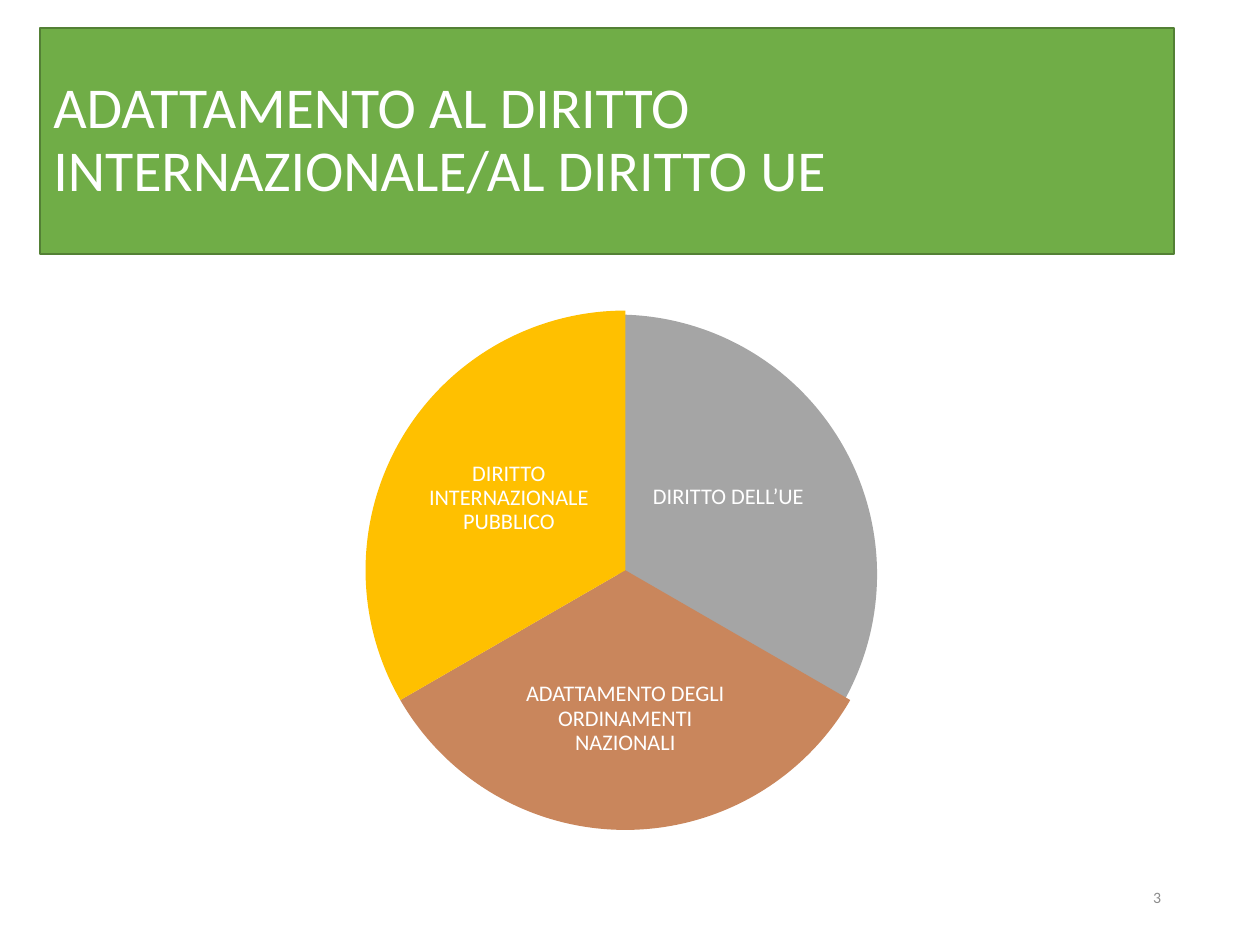
from pptx import Presentation
from pptx.dml.color import RGBColor
from pptx.enum.shapes import MSO_SHAPE
from pptx.enum.text import MSO_ANCHOR, PP_ALIGN
from pptx.util import Inches, Pt

RECTANGLE = MSO_SHAPE.RECTANGLE
PIE = MSO_SHAPE.PIE
MIDDLE = MSO_ANCHOR.MIDDLE
LEFT, CENTER, RIGHT = PP_ALIGN.LEFT, PP_ALIGN.CENTER, PP_ALIGN.RIGHT

FONT = "Calibri"
WHITE = "FFFFFF"
PIE_SIZE = 3.88
ANGLE_UNITS_PER_DEGREE = 0.6

SECTORS = [
    ("DIRITTO DELL’UE", "A5A5A5", (2.67, 2.35), (270, 30), (4.78, 3.07, 1.32, 1.29)),
    ("ADATTAMENTO DEGLI ORDINAMENTI NAZIONALI", "C9865C", (2.73, 2.32), (30, 150),
     (3.79, 4.77, 1.76, 1.2)),
    ("DIRITTO INTERNAZIONALE PUBBLICO", "FFC000", (2.73, 2.32), (150, 270),
     (3.14, 3.08, 1.32, 1.29)),
]


def color(hex_value):
    return RGBColor.from_string(hex_value)


def write_text(shape, text, size, font_color=WHITE, align=LEFT, line_spacing=None, inset=None):
    frame = shape.text_frame
    frame.word_wrap = True
    frame.vertical_anchor = MIDDLE
    if inset is not None:
        frame.margin_left = frame.margin_right = Inches(inset)
        frame.margin_top = frame.margin_bottom = Inches(inset)
    para = frame.paragraphs[0]
    para.alignment = align
    if line_spacing is not None:
        para.line_spacing = line_spacing
    span = para.add_run()
    span.text = text
    span.font.name = FONT
    span.font.size = Pt(size)
    span.font.color.rgb = color(font_color)


def add_filled_shape(page, kind, bounds, fill, line=None):
    shape = page.shapes.add_shape(kind, *map(Inches, bounds))
    shape.shadow.inherit = False
    shape.fill.solid()
    shape.fill.fore_color.rgb = color(fill)
    if line is None:
        shape.line.fill.background()
    else:
        shape.line.color.rgb = color(line)
        shape.line.width = Pt(1)
    return shape


def add_text_box(page, bounds, text, **text_format):
    box = page.shapes.add_textbox(*map(Inches, bounds))
    write_text(box, text, **text_format)


def add_sector(page, label, fill, corner, angles, label_bounds):
    sector = add_filled_shape(page, PIE, (*corner, PIE_SIZE, PIE_SIZE), fill)
    for index, angle in enumerate(angles):
        sector.adjustments[index] = angle * ANGLE_UNITS_PER_DEGREE
    add_text_box(page, label_bounds, label, size=12, align=CENTER, line_spacing=0.9, inset=0.02)


def main():
    deck = Presentation()
    deck.slide_width = Inches(9.41)
    deck.slide_height = Inches(7.03)
    page = deck.slides.add_slide(deck.slide_layouts[6])

    banner = add_filled_shape(page, RECTANGLE, (0.3, 0.21, 8.47, 1.69), "70AD47", line="538035")
    write_text(banner, "ADATTAMENTO AL DIRITTO INTERNAZIONALE/AL DIRITTO UE",
               size=31.1, line_spacing=0.9)

    for sector in SECTORS:
        add_sector(page, *sector)

    add_text_box(page, (6.65, 6.52, 2.12, 0.37), "3", size=8.5, font_color="8C8C8C", align=RIGHT)
    deck.save("out.pptx")


if __name__ == "__main__":
    main()
